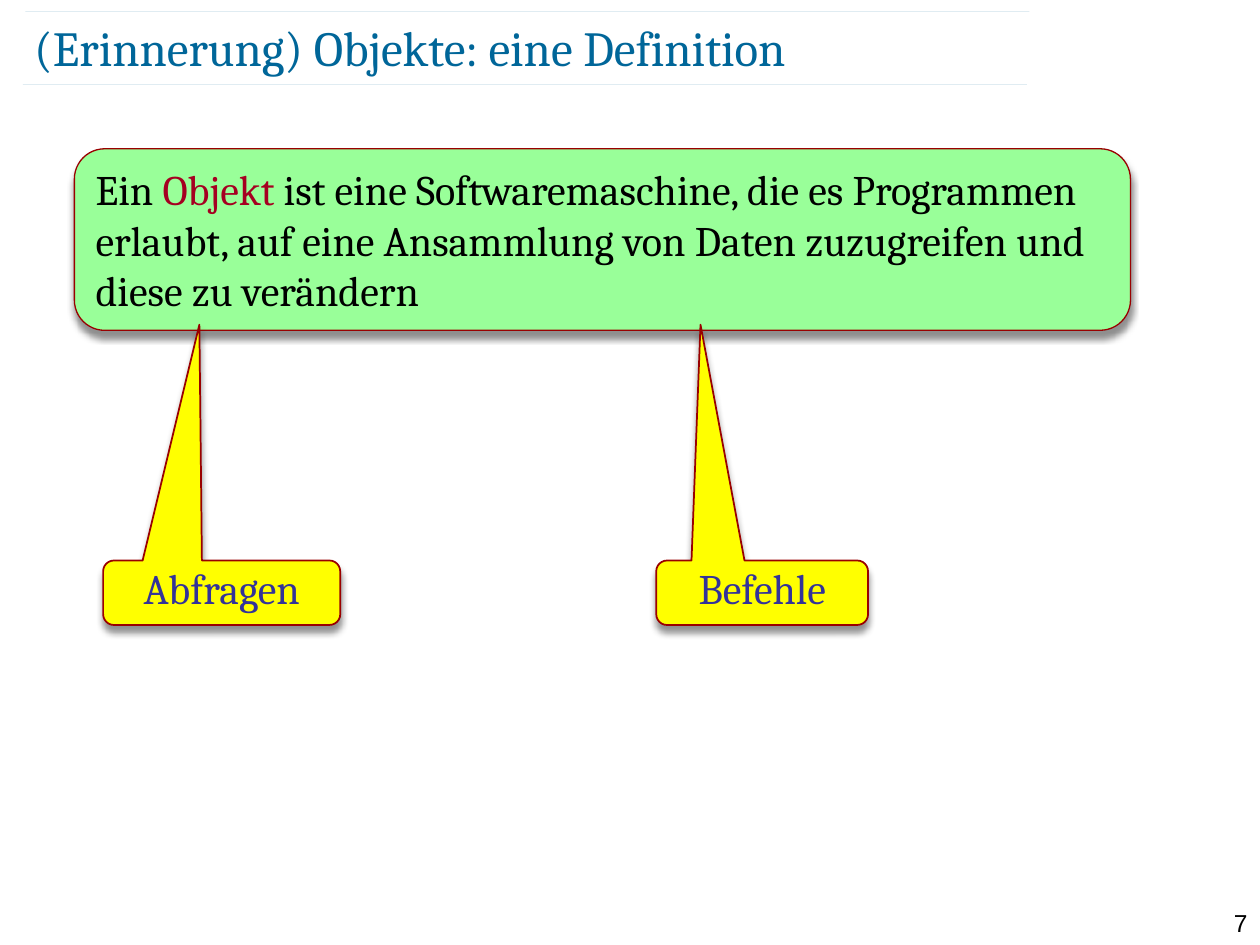
from lxml.etree import SubElement
from pptx import Presentation
from pptx.dml.color import RGBColor as RGB
from pptx.enum.shapes import MSO_CONNECTOR, MSO_SHAPE as SHAPE
from pptx.enum.text import MSO_ANCHOR as ANCHOR, PP_ALIGN as ALIGN
from pptx.oxml.ns import qn
from pptx.util import Cm, Pt

THEME = {
    "font": "Cambria", "number_font": "Arial",
    "title_size": 28, "body_size": 24, "number_size": 14,
    "title": "006699", "text": "000000", "accent": "A50021", "label": "333399",
    "box": "99FF99", "callout": "FFFF00", "border": "990000", "shadow": "000000",
}

TITLE = "(Erinnerung) Objekte: eine Definition"
DEFINITION = [
    ("Ein ", "text"),
    ("Objekt", "accent"),
    (" ist eine Softwaremaschine, die es Programmen erlaubt, auf eine "
     "Ansammlung von Daten zuzugreifen und diese zu verändern", "text"),
]
CALLOUTS = [
    ("Abfragen", 2.08, 4.78, -0.094),
    ("Befehle", 13.23, 4.27, -0.291),
]
RULES = [(0.46, 1.7), (0.51, 0.23)]
RULE_WIDTH = 20.24
PAGE = "7"


def color(name):
    return RGB.from_string(THEME[name])


def add_run(p, text, size, fill, font="font"):
    r = p.add_run()
    r.text = text
    r.font.name = THEME[font]
    r.font.size = Pt(THEME[size])
    r.font.color.rgb = color(fill)


def set_insets(tf, x, y):
    tf.margin_left = tf.margin_right = Cm(x)
    tf.margin_top = tf.margin_bottom = Cm(y)


def add_alpha(clr, percent):
    SubElement(clr, qn("a:alpha"), val=str(percent * 1000))


def add_box(s, kind, place, fill, width):
    sp = s.shapes.add_shape(kind, *map(Cm, place))
    sp.fill.solid()
    sp.fill.fore_color.rgb = color(fill)
    sp.line.color.rgb = color("border")
    sp.line.width = Pt(width)
    sp.shadow.inherit = False
    effects = sp._element.spPr.find(qn("a:effectLst"))
    shadow = SubElement(effects, qn("a:outerShdw"), blurRad=str(Pt(4)),
                        dist=str(Pt(4)), dir="5400000", rotWithShape="0")
    add_alpha(SubElement(shadow, qn("a:srgbClr"), val=THEME["shadow"]), 43)
    sp.text_frame.word_wrap = True
    return sp


def add_rule(s, x, y):
    line = s.shapes.add_connector(MSO_CONNECTOR.STRAIGHT, Cm(x), Cm(y),
                                  Cm(x + RULE_WIDTH), Cm(y))
    line.line.color.rgb = color("title")
    line.line.width = Pt(0.1)
    spPr = line._element.spPr
    add_alpha(next(spPr.iter(qn("a:srgbClr"))), 35)
    SubElement(spPr, qn("a:effectLst"))


def add_title(s):
    sp = s.shapes.title
    sp.left, sp.top, sp.width, sp.height = map(Cm, (0.69, 0.33, 22.07, 1.22))
    tf = sp.text_frame
    set_insets(tf, 0, 0)
    tf.vertical_anchor = ANCHOR.MIDDLE
    p = tf.paragraphs[0]
    p.alignment = ALIGN.LEFT
    add_run(p, TITLE, "title_size", "title")


def add_definition(s):
    sp = add_box(s, SHAPE.ROUNDED_RECTANGLE, (1.5, 3, 21.29, 3.66), "box", 0.75)
    tf = sp.text_frame
    tf.vertical_anchor = ANCHOR.TOP
    p = tf.paragraphs[0]
    p.alignment = ALIGN.LEFT
    for text, fill in DEFINITION:
        add_run(p, text, "body_size", fill)


def add_callout(s, text, left, width, tip):
    sp = add_box(s, SHAPE.ROUNDED_RECTANGULAR_CALLOUT,
                 (left, 11.3, width, 1.3), "callout", 1)
    for i, value in enumerate((tip, -4.157, 0.167)):
        sp.adjustments[i] = value
    tf = sp.text_frame
    set_insets(tf, 0, 0.13)
    tf.vertical_anchor = ANCHOR.MIDDLE
    p = tf.paragraphs[0]
    p.alignment = ALIGN.CENTER
    p.line_spacing = 0.8
    add_run(p, text, "body_size", "label")


def add_page_number(s):
    tf = s.shapes.add_textbox(*map(Cm, (24, 18.19, 1.4, 0.61))).text_frame
    tf.word_wrap = True
    p = tf.paragraphs[0]
    p.alignment = ALIGN.RIGHT
    add_run(p, PAGE, "number_size", "text", "number_font")


def main():
    prs = Presentation()
    prs.slide_width, prs.slide_height = Cm(25.4), Cm(19.05)
    s = prs.slides.add_slide(prs.slide_layouts[5])
    add_page_number(s)
    for rule in RULES:
        add_rule(s, *rule)
    add_title(s)
    add_definition(s)
    for callout in CALLOUTS:
        add_callout(s, *callout)
    prs.save("out.pptx")


if __name__ == "__main__":
    main()
